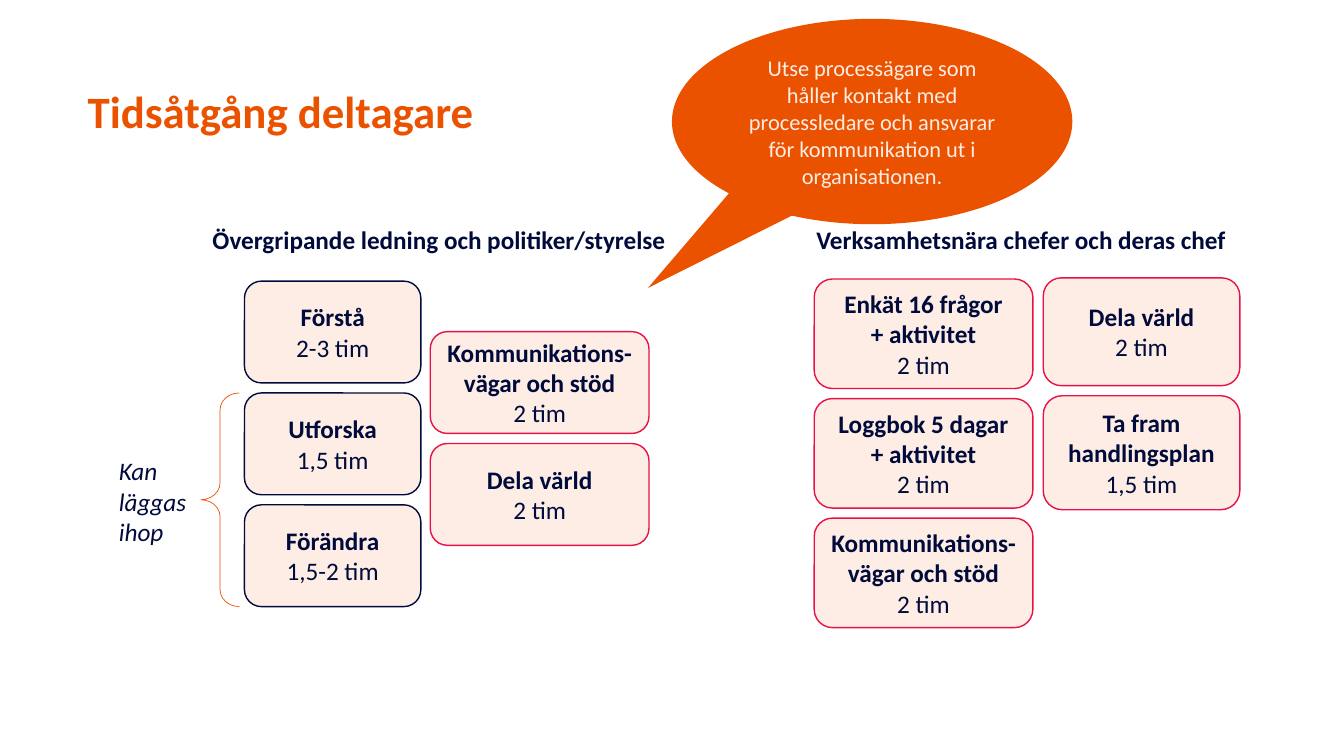
from pptx import Presentation
from pptx.dml.color import RGBColor
from pptx.enum.shapes import MSO_SHAPE
from pptx.enum.text import MSO_ANCHOR, MSO_AUTO_SIZE, PP_ALIGN
from pptx.util import Pt

ROUND = MSO_SHAPE.ROUNDED_RECTANGLE
CALL = MSO_SHAPE.OVAL_CALLOUT
BRACE = MSO_SHAPE.LEFT_BRACE
TOP, MID = MSO_ANCHOR.TOP, MSO_ANCHOR.MIDDLE
LEFT, MIDDLE = PP_ALIGN.LEFT, PP_ALIGN.CENTER
NONE = MSO_AUTO_SIZE.NONE

# Content
FONT = "Calibri"
NAVY, RED, ORANGE, CREAM = "000B3C", "E81147", "EB5200", "FDEDE5"
TITLE = "Tidsåtgång deltagare"
ADVICE = ("Utse processägare som håller kontakt med processledare och "
          "ansvarar för kommunikation ut i organisationen.")
NOTE = "Kan läggas ihop"
HEADS = [  # text, left, width
    ("Övergripande ledning och politiker/styrelse", 144.7, 340.6),
    ("Verksamhetsnära chefer och deras chef", 576, 308.9),
]
GAP = 7.2
COLUMNS = [  # left, top, width, edge, cards of (height, name, time)
    (174.6, 200.8, 126, NAVY, [
        (72.7, "Förstå", "2-3 tim"),
        (72.7, "Utforska", "1,5 tim"),
        (72.7, "Förändra", "1,5-2 tim")]),
    (307.4, 236.9, 156.2, RED, [
        (72.7, "Kommunikations-vägar och stöd", "2 tim"),
        (72.7, "Dela värld", "2 tim")]),
    (581.6, 199.3, 156.2, RED, [
        (78.2, "Enkät 16 frågor\n+ aktivitet", "2 tim"),
        (78.2, "Loggbok 5 dagar + aktivitet", "2 tim"),
        (78.2, "Kommunikations-vägar och stöd", "2 tim")]),
    (745.2, 198.5, 140.4, RED, [
        (77, "Dela värld", "2 tim"),
        (81.4, "Ta fram handlingsplan", "1,5 tim")]),
]

deck = Presentation()
deck.slide_width, deck.slide_height = Pt(960), Pt(540)
slide = deck.slides.add_slide(deck.slide_layouts[5])


def paint(hue):
    return RGBColor.from_string(hue)


def place(*box):
    return [Pt(n) for n in box]


def write(para, text, size=18, hue=NAVY, bold=False, slant=False):
    for i, line in enumerate(text.split("\n")):
        if i:
            para.add_line_break()
        run = para.add_run()
        run.text = line
        font = run.font
        font.name, font.size = FONT, Pt(size)
        font.bold, font.italic = bold, slant
        font.color.rgb = paint(hue)


def setup(frame, anchor, align, wrap=True):
    frame.word_wrap = wrap
    frame.auto_size = NONE
    frame.vertical_anchor = anchor
    para = frame.paragraphs[0]
    para.alignment = align
    return para


def draw(kind, box, fill=None, edge=None, weight=1):
    shape = slide.shapes.add_shape(kind, *place(*box))
    shape.shadow.inherit = False
    if fill:
        shape.fill.solid()
        shape.fill.fore_color.rgb = paint(fill)
    else:
        shape.fill.background()
    if edge:
        shape.line.color.rgb = paint(edge)
        shape.line.width = Pt(weight)
    else:
        shape.line.fill.background()
    return shape


def label(text, box, wrap=True, **style):
    frame = slide.shapes.add_textbox(*place(*box)).text_frame
    write(setup(frame, TOP, LEFT, wrap), text, **style)


# Title
title = slide.shapes.title
title.left, title.top, title.width, title.height = place(55.4, 56, 904, 57)
para = setup(title.text_frame, TOP, LEFT)
para.line_spacing = 1.0
write(para, TITLE, size=32, hue=ORANGE, bold=True)

# Group headings
for text, x, w in HEADS:
    label(text, (x, 157, w, 29), wrap=False, bold=True)

# Cards, stacked in columns
for x, y, w, edge, cards in COLUMNS:
    for h, name, time in cards:
        frame = draw(ROUND, (x, y, w, h), CREAM, edge).text_frame
        write(setup(frame, MID, MIDDLE), name, bold=True)
        para = frame.add_paragraph()
        para.alignment = MIDDLE
        write(para, time)
        y += h + GAP

# Callout
bubble = draw(CALL, (480, 13.5, 286, 146.7), ORANGE)
bubble.adjustments[0], bubble.adjustments[1] = -0.56, 0.81
write(setup(bubble.text_frame, MID, MIDDLE), ADVICE, size=16, hue=CREAM)

# Side note with brace
label(NOTE, (77.8, 322, 75.6, 72.7), slant=True)
brace = draw(BRACE, (143.5, 280.7, 27.4, 152.6), edge=ORANGE, weight=0.5)
brace.adjustments[0], brace.adjustments[1] = 0.44, 0.5

deck.save("out.pptx")
